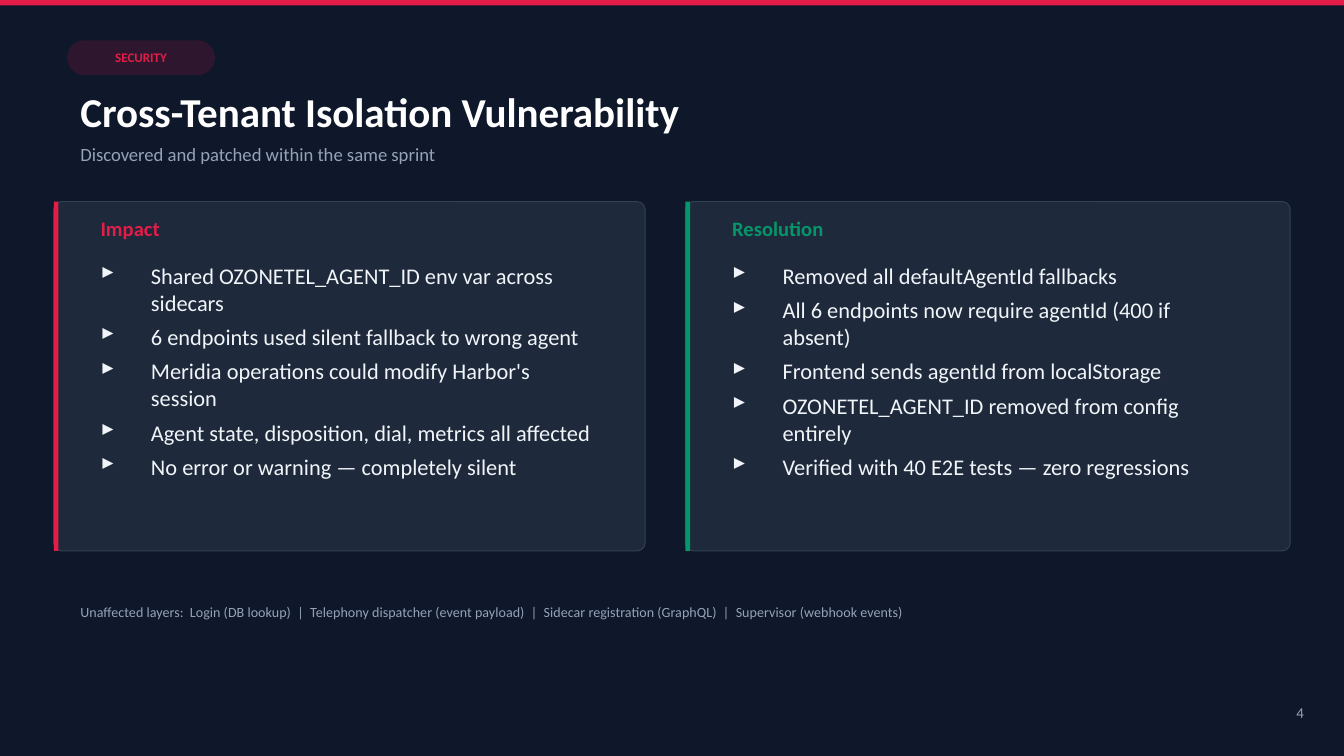
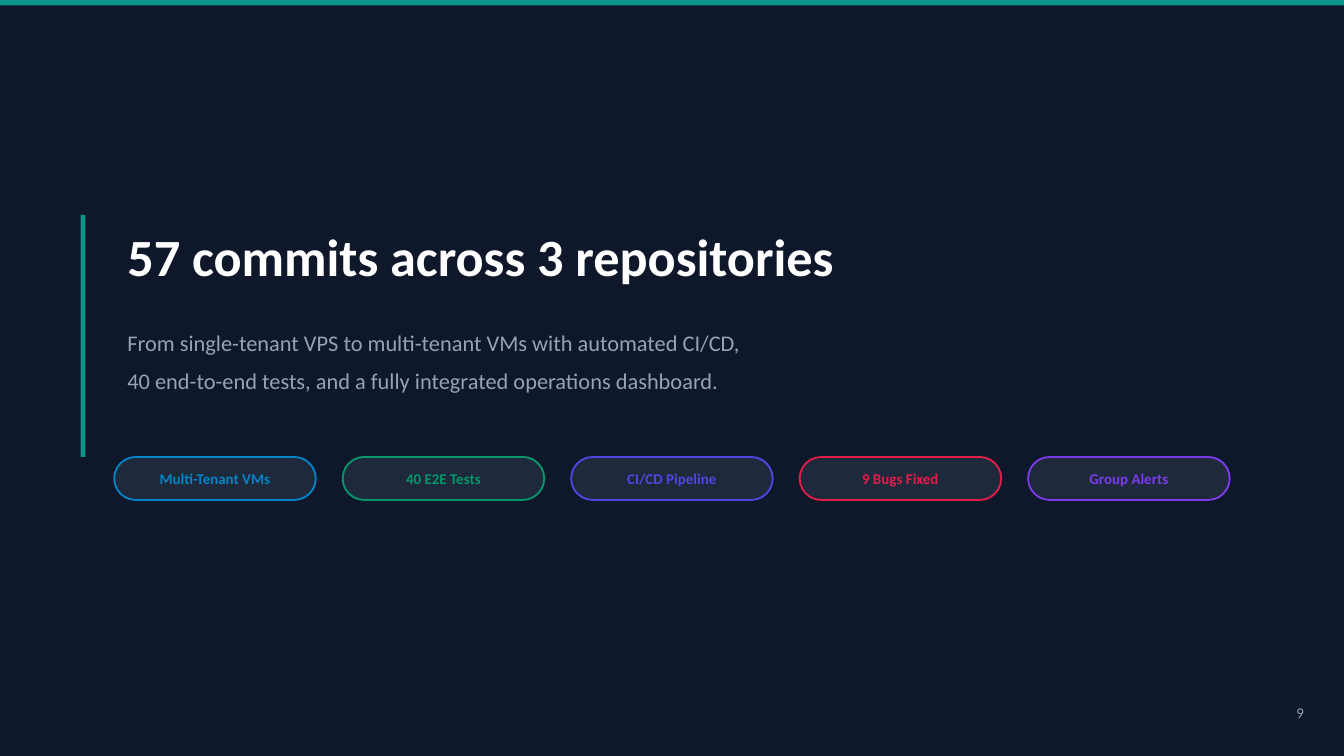
from dataclasses import dataclass
from typing import NamedTuple

from lxml.etree import SubElement
from pptx import Presentation
from pptx.dml.color import RGBColor as Rgb
from pptx.enum.shapes import MSO_SHAPE as Kind
from pptx.enum.text import MSO_ANCHOR as Anchor, PP_ALIGN as Align
from pptx.oxml.ns import qn
from pptx.util import Emu, Pt

SCALE = 4572  # EMU per px, 200 px to the inch
WIDTH, HEIGHT = 2000, 1125
BAR = 7  # width of the upright accent bars


@dataclass(frozen=True)
class Theme:
    font: str = "Calibri"
    back: str = "0F172A"
    panel: str = "1E293B"
    edge: str = "334155"
    white: str = "FFFFFF"
    body: str = "F1F5F9"
    muted: str = "94A3B8"
    red: str = "E11D48"
    green: str = "059669"
    teal: str = "0D9488"
    blue: str = "0284C7"
    indigo: str = "4F46E5"
    violet: str = "7C3AED"
    hero: float = 28
    title: float = 22
    text: float = 12
    head: float = 11
    sub: float = 10
    small: float = 8
    note: float = 7.5
    tag: float = 7


THEME = Theme()


class Box(NamedTuple):
    x: int
    y: int
    w: int
    h: int


class Style(NamedTuple):
    size: float
    color: str
    bold: bool = False
    align: Align = Align.LEFT


class Card(NamedTuple):
    box: Box
    color: str
    head: str
    points: list[str]


class Pill(NamedTuple):
    label: str
    color: str


def px(n: int) -> Emu:
    return Emu(n * SCALE)


def rgb(code: str) -> Rgb:
    return Rgb.from_string(code)


def shape(slide, box: Box, fill: str, radius: float = 0, line: str = "",
          width: float = 1, alpha: int = 100):
    """Draw a rectangle, rounded when radius is given; alpha is in percent."""
    kind = Kind.ROUNDED_RECTANGLE if radius else Kind.RECTANGLE
    item = slide.shapes.add_shape(kind, *map(px, box))
    item.shadow.inherit = False
    if radius:
        item.adjustments[0] = radius
    item.fill.solid()
    item.fill.fore_color.rgb = rgb(fill)
    if alpha < 100:
        tint = item.fill._xPr.find(".//" + qn("a:srgbClr"))
        SubElement(tint, qn("a:alpha"), val=str(alpha * 1000))
    if line:
        item.line.color.rgb = rgb(line)
        item.line.width = Pt(width)
    else:
        item.line.fill.background()
    return item


def put(para, words: str, style: Style) -> None:
    para.alignment = style.align
    run = para.add_run()
    run.text = words
    font = run.font
    font.name, font.size, font.bold = THEME.font, Pt(style.size), style.bold
    font.color.rgb = rgb(style.color)


def bullet(para) -> None:
    props = para._p.get_or_add_pPr()
    props.set("marL", str(px(75)))
    props.set("indent", str(px(-75)))
    SubElement(props, qn("a:buSzPct"), val="100000")
    SubElement(props, qn("a:buChar"), char="▸")
    para.space_after = Pt(4)


def text(slide, box: Box, lines: list[str], style: Style,
         spacing: float = 0, points: bool = False) -> None:
    frame = slide.shapes.add_textbox(*map(px, box)).text_frame
    frame.word_wrap = True
    frame.vertical_anchor = Anchor.TOP if points else Anchor.MIDDLE
    for i, words in enumerate(lines):
        para = frame.add_paragraph() if i else frame.paragraphs[0]
        if points:
            bullet(para)
        if spacing:
            para.line_spacing = spacing
        put(para, words, style)


def label(item, words: str, size: float, color: str) -> None:
    """Centre a bold caption inside a shape."""
    frame = item.text_frame
    frame.margin_left = frame.margin_right = 0
    frame.margin_top = frame.margin_bottom = 0
    frame.vertical_anchor = Anchor.MIDDLE
    put(frame.paragraphs[0], words, Style(size, color, True, Align.CENTER))


def page(deck, color: str, number: int):
    """Add a slide with the shared background, top band and page number."""
    slide = deck.slides.add_slide(deck.slide_layouts[6])
    fill = slide.background.fill
    fill.solid()
    fill.fore_color.rgb = rgb(THEME.back)
    shape(slide, Box(0, 0, WIDTH, 8), color)
    text(slide, Box(1860, 1030, 100, 60), [str(number)],
         Style(THEME.small, THEME.muted, align=Align.RIGHT))
    return slide


def panel(slide, card: Card) -> None:
    x, y, w, h = card.box
    shape(slide, card.box, THEME.panel, 0.023, THEME.edge, 0.5)
    shape(slide, Box(x, y, BAR, h), card.color)
    text(slide, Box(x + 50, y + 10, 600, 60), [card.head],
         Style(THEME.head, card.color, True))
    text(slide, Box(x + 50, y + 80, w - 100, 400), card.points,
         Style(THEME.text, THEME.body), points=True)


CARDS = [
    Card(Box(80, 300, 880, 520), THEME.red, "Impact", [
        "Shared OZONETEL_AGENT_ID env var across sidecars",
        "6 endpoints used silent fallback to wrong agent",
        "Meridia operations could modify Harbor's session",
        "Agent state, disposition, dial, metrics all affected",
        "No error or warning — completely silent",
    ]),
    Card(Box(1020, 300, 900, 520), THEME.green, "Resolution", [
        "Removed all defaultAgentId fallbacks",
        "All 6 endpoints now require agentId (400 if absent)",
        "Frontend sends agentId from localStorage",
        "OZONETEL_AGENT_ID removed from config entirely",
        "Verified with 40 E2E tests — zero regressions",
    ]),
]

LAYERS = [
    "Login (DB lookup)",
    "Telephony dispatcher (event payload)",
    "Sidecar registration (GraphQL)",
    "Supervisor (webhook events)",
]

PILLS = [
    Pill("Multi-Tenant VMs", THEME.blue),
    Pill("40 E2E Tests", THEME.green),
    Pill("CI/CD Pipeline", THEME.indigo),
    Pill("9 Bugs Fixed", THEME.red),
    Pill("Group Alerts", THEME.violet),
]


def security(deck) -> None:
    slide = page(deck, THEME.red, 4)
    badge = shape(slide, Box(100, 60, 220, 52), THEME.red, 0.5, alpha=15)
    label(badge, "SECURITY", THEME.tag, THEME.red)
    text(slide, Box(100, 120, 1800, 90),
         ["Cross-Tenant Isolation Vulnerability"],
         Style(THEME.title, THEME.white, True))
    text(slide, Box(100, 200, 1800, 60),
         ["Discovered and patched within the same sprint"],
         Style(THEME.sub, THEME.muted))
    for card in CARDS:
        panel(slide, card)
    text(slide, Box(100, 880, 1800, 60),
         ["Unaffected layers:  " + "  |  ".join(LAYERS)],
         Style(THEME.note, THEME.muted))


def closing(deck) -> None:
    slide = page(deck, THEME.teal, 9)
    shape(slide, Box(120, 320, BAR, 360), THEME.teal)
    text(slide, Box(170, 320, 1600, 120), ["57 commits across 3 repositories"],
         Style(THEME.hero, THEME.white, True))
    text(slide, Box(170, 460, 1400, 140), [
        "From single-tenant VPS to multi-tenant VMs with automated CI/CD,",
        "40 end-to-end tests, and a fully integrated operations dashboard.",
    ], Style(THEME.text, THEME.muted), spacing=1.4)
    for i, pill in enumerate(PILLS):
        item = shape(slide, Box(170 + 340 * i, 680, 300, 64), THEME.panel,
                     0.5, pill.color)
        label(item, pill.label, THEME.small, pill.color)


def main() -> None:
    deck = Presentation()
    deck.slide_width, deck.slide_height = px(WIDTH), px(HEIGHT)
    security(deck)
    closing(deck)
    deck.save("out.pptx")


if __name__ == "__main__":
    main()
